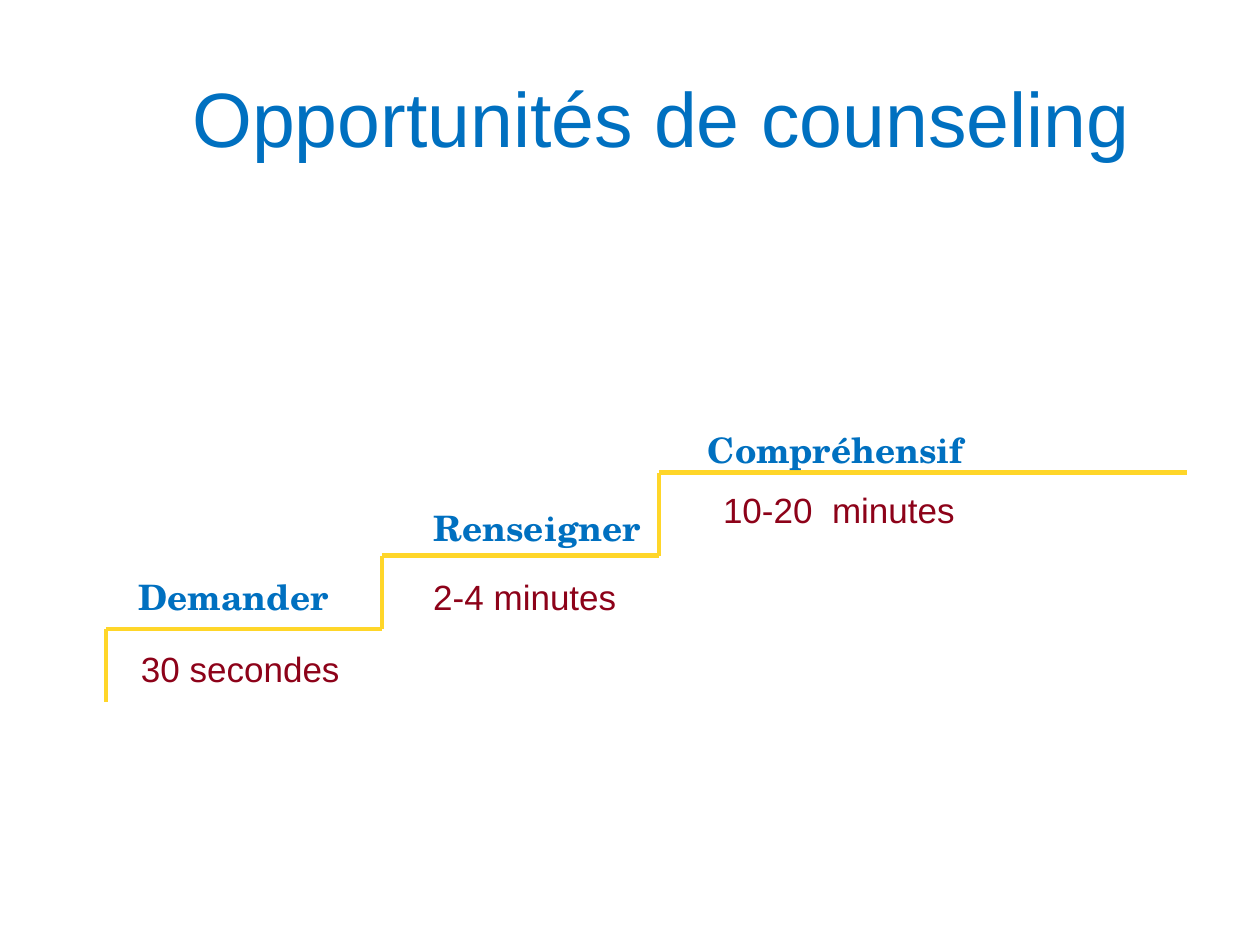
"""Build a slide with a staircase of counselling steps and their durations."""
from itertools import pairwise

from lxml import etree
from pptx import Presentation
from pptx.dml.color import RGBColor
from pptx.enum.shapes import MSO_CONNECTOR
from pptx.enum.text import MSO_ANCHOR, PP_ALIGN
from pptx.oxml.ns import qn
from pptx.util import Inches, Pt

STRAIGHT = MSO_CONNECTOR.STRAIGHT
MIDDLE = MSO_ANCHOR.MIDDLE
CENTER = PP_ALIGN.CENTER

COLORS = {"blue": "0070C0", "red": "8D0219", "gold": "FFD629"}
HEAD = {"name": "Arial", "size": Pt(44), "bold": False}
STEP = {"name": "TeX Gyre Schola", "size": Pt(20), "bold": True}
TIME = {"name": "Arial", "size": Pt(20), "bold": False}


def write(frame, text, style, color):
    frame.word_wrap = True
    run = frame.paragraphs[0].add_run()
    run.text = text
    for key, value in style.items():
        setattr(run.font, key, value)
    run.font.color.rgb = RGBColor.from_string(COLORS[color])


prs = Presentation()
prs.slide_width, prs.slide_height = Inches(10), Inches(7.5)
slide = prs.slides.add_slide(prs.slide_layouts[5])

title = slide.shapes.title
title.left, title.top = Inches(0.5), Inches(0.3)
title.width, title.height = Inches(9.5), Inches(1.25)
write(title.text_frame, "Opportunités de counseling", HEAD, "blue")
title.text_frame.vertical_anchor = MIDDLE
title.text_frame.paragraphs[0].alignment = CENTER

edges = [0.84, 3.03, 5.23, 9.42]
levels = [5.57, 4.99, 4.41, 3.75]
corners = [(edges[0], levels[0])]
for (left, right), level in zip(pairwise(edges), levels[1:]):
    corners += [(left, level), (right, level)]

for start, end in pairwise(corners):
    line = slide.shapes.add_connector(STRAIGHT, *map(Inches, start + end))
    line.line.color.rgb = RGBColor.from_string(COLORS["gold"])
    line.line.width = Pt(2.5)
    etree.SubElement(line._element.spPr, qn("a:effectLst"))

labels = [
    ("Demander", 1, 4.52, 1.88, STEP, "blue"),
    ("Renseigner", 3.34, 3.97, 1.89, STEP, "blue"),
    ("Compréhensif", 5.52, 3.35, 3.9, STEP, "blue"),
    ("30 secondes", 1.02, 5.09, 2, TIME, "red"),
    ("2-4 minutes", 3.34, 4.52, 2, TIME, "red"),
    ("10-20  minutes", 5.64, 3.83, 3.76, TIME, "red"),
]
for text, left, top, width, style, color in labels:
    box = slide.shapes.add_textbox(*map(Inches, (left, top, width, 0.44)))
    write(box.text_frame, text, style, color)

prs.save("out.pptx")
